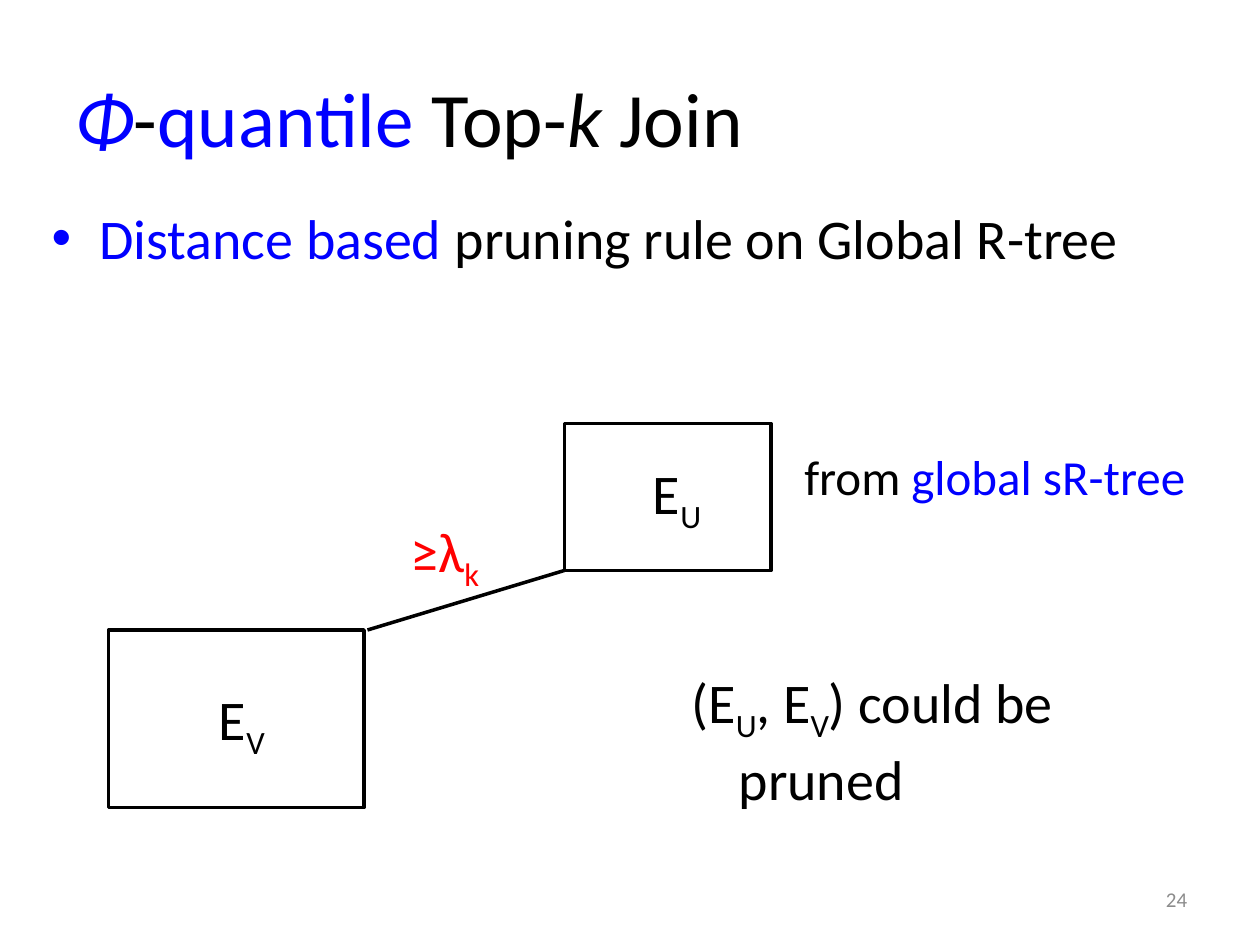
from lxml import etree
from pptx import Presentation
from pptx import util as u
from pptx.dml.color import RGBColor
from pptx.enum import shapes, text
from pptx.oxml import ns

BLACK = RGBColor(0x00, 0x00, 0x00)
BLUE = RGBColor(0x00, 0x00, 0xFF)
RED = RGBColor(0xFF, 0x00, 0x00)
GRAY = RGBColor(0x8C, 0x8C, 0x8C)
FONT = "Calibri"
LINE_WIDTH = 2
HANGING = 27

ENTRY_V = (62, 360, 146, 101.5)
ENTRY_U = (322.5, 242, 118, 84)
DISTANCE = (210, 360, 322.5, 326)

TEXTS = [
    {"box": (36, 21.6, 648, 90), "size": 44, "anchor": text.MSO_ANCHOR.MIDDLE,
     "runs": [("Φ", BLUE, "italic"), ("-", BLACK, ""), ("quantile ", BLUE, ""),
              ("Top-", BLACK, ""), ("k", BLACK, "italic"), (" Join", BLACK, "")]},
    {"box": (22.5, 112.5, 648, 62), "size": 32, "hanging": True, "bullet": "•",
     "runs": [("Distance based ", BLUE, ""), ("pruning rule on Global R-tree", BLACK, "")]},
    {"box": (517.5, 499.5, 168, 29), "size": 12, "anchor": text.MSO_ANCHOR.MIDDLE,
     "align": text.PP_ALIGN.RIGHT, "runs": [("24", GRAY, "")]},
    {"box": (118, 387.5, 42.5, 46), "size": 32, "wrap": False,
     "runs": [("E", BLACK, ""), ("V", BLACK, "sub")]},
    {"box": (366, 258.5, 44, 46), "size": 32, "wrap": False,
     "runs": [("E", BLACK, ""), ("U", BLACK, "sub")]},
    {"box": (452.5, 251.5, 234.5, 41), "size": 28, "wrap": False,
     "runs": [("from ", BLACK, ""), ("global sR-tree", BLUE, "")]},
    {"box": (227.5, 291.5, 55.5, 46), "size": 32, "wrap": False,
     "runs": [("≥λ", RED, ""), ("k", RED, "sub")]},
    {"box": (388, 378, 294.5, 129.5), "size": 32, "hanging": True,
     "runs": [("(E", BLACK, ""), ("U", BLACK, "sub"), (", E", BLACK, ""),
              ("V", BLACK, "sub"), (") could be pruned", BLACK, "")]},
]


def points(values):
    return [u.Pt(value) for value in values]


def add_entry(slide, box):
    shape = slide.shapes.add_shape(shapes.MSO_SHAPE.RECTANGLE, *points(box))
    shape.shadow.inherit = False
    shape.fill.background()
    shape.line.color.rgb = BLACK
    shape.line.width = u.Pt(LINE_WIDTH)


def add_distance(slide, ends):
    line = slide.shapes.add_connector(shapes.MSO_CONNECTOR.STRAIGHT, *points(ends))
    line.line.color.rgb = BLACK
    line.line.width = u.Pt(LINE_WIDTH)
    etree.SubElement(line._element.spPr, ns.qn("a:effectLst"))


def set_hanging(paragraph, size, bullet):
    paragraph.space_before = u.Pt(size * 0.2)
    properties = paragraph._p.get_or_add_pPr()
    properties.set("marL", str(u.Pt(HANGING)))
    properties.set("indent", str(-u.Pt(HANGING)))
    if bullet:
        font = etree.SubElement(properties, ns.qn("a:buFont"))
        font.set("typeface", "Arial")
        etree.SubElement(properties, ns.qn("a:buChar")).set("char", bullet)


def add_text(slide, item):
    frame = slide.shapes.add_textbox(*points(item["box"])).text_frame
    frame.word_wrap = item.get("wrap", True)
    frame.vertical_anchor = item.get("anchor", text.MSO_ANCHOR.TOP)
    paragraph = frame.paragraphs[0]
    paragraph.alignment = item.get("align", text.PP_ALIGN.LEFT)
    if item.get("hanging"):
        set_hanging(paragraph, item["size"], item.get("bullet"))
    for words, color, style in item["runs"]:
        run = paragraph.add_run()
        run.text = words
        run.font.name = FONT
        run.font.size = u.Pt(item["size"])
        run.font.color.rgb = color
        run.font.italic = style == "italic"
        if style == "sub":
            run.font._element.set("baseline", "-25000")


def main():
    presentation = Presentation()
    presentation.slide_width, presentation.slide_height = points((720, 540))
    slide = presentation.slides.add_slide(presentation.slide_layouts[6])
    for box in (ENTRY_V, ENTRY_U):
        add_entry(slide, box)
    add_distance(slide, DISTANCE)
    for item in TEXTS:
        add_text(slide, item)
    presentation.save("out.pptx")


if __name__ == "__main__":
    main()
